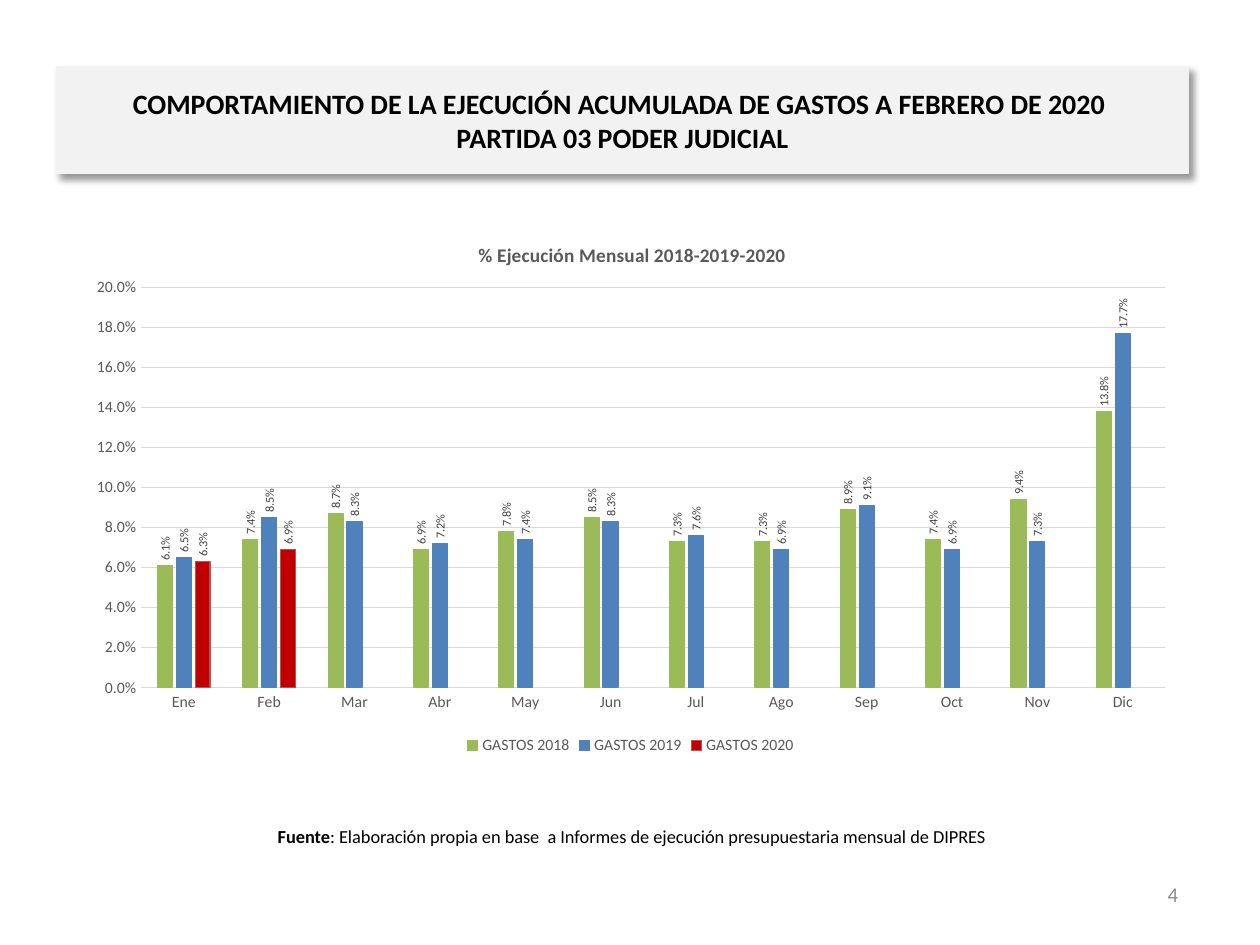
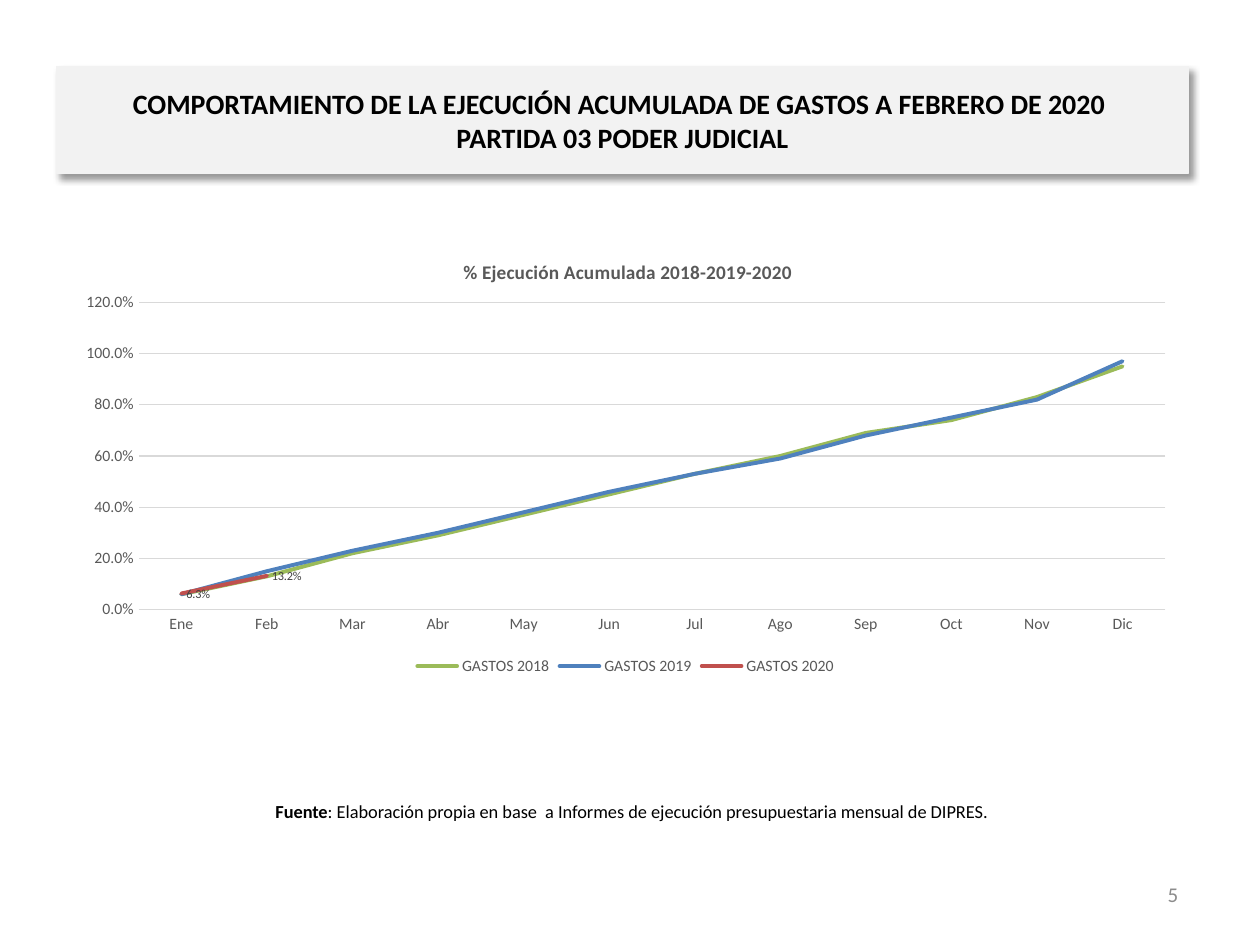
from lxml.etree import SubElement
from pptx import Presentation
from pptx.chart.data import CategoryChartData
from pptx.dml.color import RGBColor
from pptx.enum.chart import XL_CHART_TYPE, XL_LABEL_POSITION, XL_LEGEND_POSITION, XL_TICK_MARK
from pptx.enum.text import MSO_ANCHOR, MSO_AUTO_SIZE, PP_ALIGN
from pptx.oxml import parse_xml
from pptx.oxml.ns import nsdecls, qn
from pptx.util import Inches, Pt

FONT = "Calibri"
BLACK, GRAY, LABEL, PALE, GRID, NUMBER = "000000", "595959", "404040", "F2F2F2", "D9D9D9", "8C8C8C"
GREEN, BLUE, RED, DARK_RED = "9BBB59", "4F81BD", "C0504D", "C00000"

TITLE = ["COMPORTAMIENTO DE LA EJECUCIÓN ACUMULADA DE GASTOS A FEBRERO DE 2020 ",
         "PARTIDA 03 PODER JUDICIAL"]
SOURCE = ": Elaboración propia en base  a Informes de ejecución presupuestaria mensual de DIPRES"
MONTHS = ["Ene", "Feb", "Mar", "Abr", "May", "Jun", "Jul", "Ago", "Sep", "Oct", "Nov", "Dic"]
YEARS = ["GASTOS 2018", "GASTOS 2019", "GASTOS 2020"]

SLIDES = [
    {"number": "4", "source": SOURCE, "source_top": 6.44,
     "type": XL_CHART_TYPE.COLUMN_CLUSTERED, "title": "% Ejecución Mensual 2018-2019-2020",
     "at": (0.59, 1.7, 8.83, 4.33), "title_at": (3.77, 1.89), "plot_at": (1.12, 2.28, 8.13, 3.18),
     "top": 0.2, "step": 0.02, "fills": [GREEN, BLUE, DARK_RED], "line": 0.75,
     "labelled": YEARS, "label_pos": XL_LABEL_POSITION.OUTSIDE_END, "label_rot": -90,
     "values": [
         [0.061, 0.074, 0.087, 0.069, 0.078, 0.085, 0.073, 0.073, 0.089, 0.074, 0.094, 0.138],
         [0.065, 0.085, 0.083, 0.072, 0.074, 0.083, 0.076, 0.069, 0.091, 0.069, 0.073, 0.177],
         [0.063, 0.069]]},
    {"number": "5", "source": SOURCE + ".", "source_top": 6.24,
     "type": XL_CHART_TYPE.LINE, "title": "% Ejecución Acumulada 2018-2019-2020",
     "at": (0.51, 1.86, 8.91, 3.54), "title_at": (3.65, 2.03), "plot_at": (1.1, 2.4, 8.15, 2.44),
     "top": 1.2, "step": 0.2, "fills": None, "line": 2.25,
     "labelled": YEARS[2:], "label_pos": XL_LABEL_POSITION.RIGHT, "label_rot": 0,
     "values": [
         [0.06, 0.13, 0.22, 0.29, 0.37, 0.45, 0.53, 0.6, 0.69, 0.74, 0.83, 0.95],
         [0.06, 0.15, 0.23, 0.3, 0.38, 0.46, 0.53, 0.59, 0.68, 0.75, 0.82, 0.97],
         [0.063, 0.132]]},
]


def rgb(color):
    return RGBColor.from_string(color)


def style(font, size, color, bold=False):
    font.name, font.size, font.bold = FONT, Pt(size), bold
    font.color.rgb = rgb(color)


def add_text(p, text, size=10.5, color=BLACK, bold=False, align=PP_ALIGN.CENTER):
    p.alignment = align
    r = p.add_run()
    r.text = text
    style(r.font, size, color, bold)


def set_line(line, color, width):
    line.color.rgb = rgb(color)
    line.width = Pt(width)


def text_box(s, *at):
    tf = s.shapes.add_textbox(*map(Inches, at)).text_frame
    tf.word_wrap = True
    tf.vertical_anchor = MSO_ANCHOR.MIDDLE
    return tf.paragraphs[0]


def add_title(s):
    sp = s.shapes.title
    sp.left, sp.top, sp.width, sp.height = map(Inches, (0.45, 0.53, 8.98, 0.85))
    sp.fill.solid()
    sp.fill.fore_color.rgb = rgb(PALE)
    set_line(sp.line, PALE, 0.75)
    sp._element.spPr.append(parse_xml(
        f'<a:effectLst {nsdecls("a")}><a:outerShdw blurRad="{Pt(4)}" dist="{Pt(3)}" dir="2700000" '
        'algn="tl" rotWithShape="0"><a:srgbClr val="000000"><a:alpha val="40000"/></a:srgbClr>'
        '</a:outerShdw></a:effectLst>'))
    tf = sp.text_frame
    tf.auto_size, tf.word_wrap, tf.vertical_anchor = MSO_AUTO_SIZE.NONE, True, MSO_ANCHOR.MIDDLE
    p = tf.paragraphs[0]
    for i, line in enumerate(TITLE):
        if i:
            p.add_line_break()
        add_text(p, line, size=16, bold=True)


def place(parent, chart_at, at):
    layout = parent.find(qn("c:layout"))
    if layout is None:
        layout = parent.makeelement(qn("c:layout"))
        parent.insert(0, layout)
    manual = SubElement(layout, qn("c:manualLayout"))
    left, top, width, height = chart_at
    fractions = [(at[0] - left) / width, (at[1] - top) / height]
    if len(at) == 4:
        SubElement(manual, qn("c:layoutTarget")).set("val", "inner")
        fractions += [at[2] / width, at[3] / height]
    for name in ("xMode", "yMode"):
        SubElement(manual, qn("c:" + name)).set("val", "edge")
    for name, value in zip("xywh", fractions):
        SubElement(manual, qn("c:" + name)).set("val", f"{value:.4f}")


def add_axes(chart, top, step):
    for axis in (chart.category_axis, chart.value_axis):
        axis.major_tick_mark = axis.minor_tick_mark = XL_TICK_MARK.NONE
        style(axis.tick_labels.font, 9, GRAY)
    chart.category_axis.has_major_gridlines = False
    set_line(chart.category_axis.format.line, GRID, 0.75)
    axis = chart.value_axis
    axis.format.line.fill.background()
    axis.has_major_gridlines = True
    set_line(axis.major_gridlines.format.line, GRID, 0.75)
    axis.minimum_scale, axis.maximum_scale, axis.major_unit = 0, top, step
    axis.tick_labels.number_format = "0.0%"
    axis.tick_labels.number_format_is_linked = False


def add_labels(series, position, rotation):
    labels = series.data_labels
    labels.show_value = True
    labels.number_format, labels.number_format_is_linked = "0.0%", False
    labels.position = position
    style(labels.font, 7, LABEL)
    if rotation:
        body = labels._element.find(f"{qn('c:txPr')}/{qn('a:bodyPr')}")
        body.set("rot", str(rotation * 60000))
        body.set("vert", "horz")


def add_chart(s, d):
    data = CategoryChartData(number_format="0.0%")
    data.categories = MONTHS
    for year, values in zip(YEARS, d["values"]):
        data.add_series(year, values + [None] * (len(MONTHS) - len(values)))
    chart = s.shapes.add_chart(d["type"], *map(Inches, d["at"]), data).chart
    style(chart.font, 10, BLACK)

    chart.has_title = True
    add_text(chart.chart_title.text_frame.paragraphs[0], d["title"], size=11, color=GRAY, bold=True)
    chart.chart_title.include_in_layout = False
    place(chart.chart_title._element, d["at"], d["title_at"])
    place(chart._chartSpace.chart.plotArea, d["at"], d["plot_at"])

    chart.has_legend = True
    chart.legend.position = XL_LEGEND_POSITION.BOTTOM
    chart.legend.include_in_layout = False
    style(chart.legend.font, 9, GRAY)
    add_axes(chart, d["top"], d["step"])

    plot = chart.plots[0]
    plot.vary_by_categories = False
    if d["fills"]:
        plot.gap_width, plot.overlap = 219, -27
    for i, (series, color) in enumerate(zip(plot.series, (GREEN, BLUE, RED))):
        set_line(series.format.line, color, d["line"])
        if d["fills"]:
            series.format.fill.solid()
            series.format.fill.fore_color.rgb = rgb(d["fills"][i])
            series.invert_if_negative = False
        else:
            series.smooth = False
            series.format.line._get_or_add_ln().set("cap", "rnd")
        if series.name in d["labelled"]:
            add_labels(series, d["label_pos"], d["label_rot"])


def main():
    prs = Presentation()
    prs.slide_width, prs.slide_height = Inches(10), Inches(7.5)
    for d in SLIDES:
        s = prs.slides.add_slide(prs.slide_layouts[5])
        add_title(s)
        add_text(text_box(s, 7.12, 6.9, 2.33, 0.4), d["number"], size=12, color=NUMBER,
                 align=PP_ALIGN.RIGHT)
        p = text_box(s, 0.42, d["source_top"], 9.19, 0.4)
        add_text(p, "Fuente", bold=True)
        add_text(p, d["source"])
        add_chart(s, d)
    prs.save("out.pptx")


if __name__ == "__main__":
    main()
